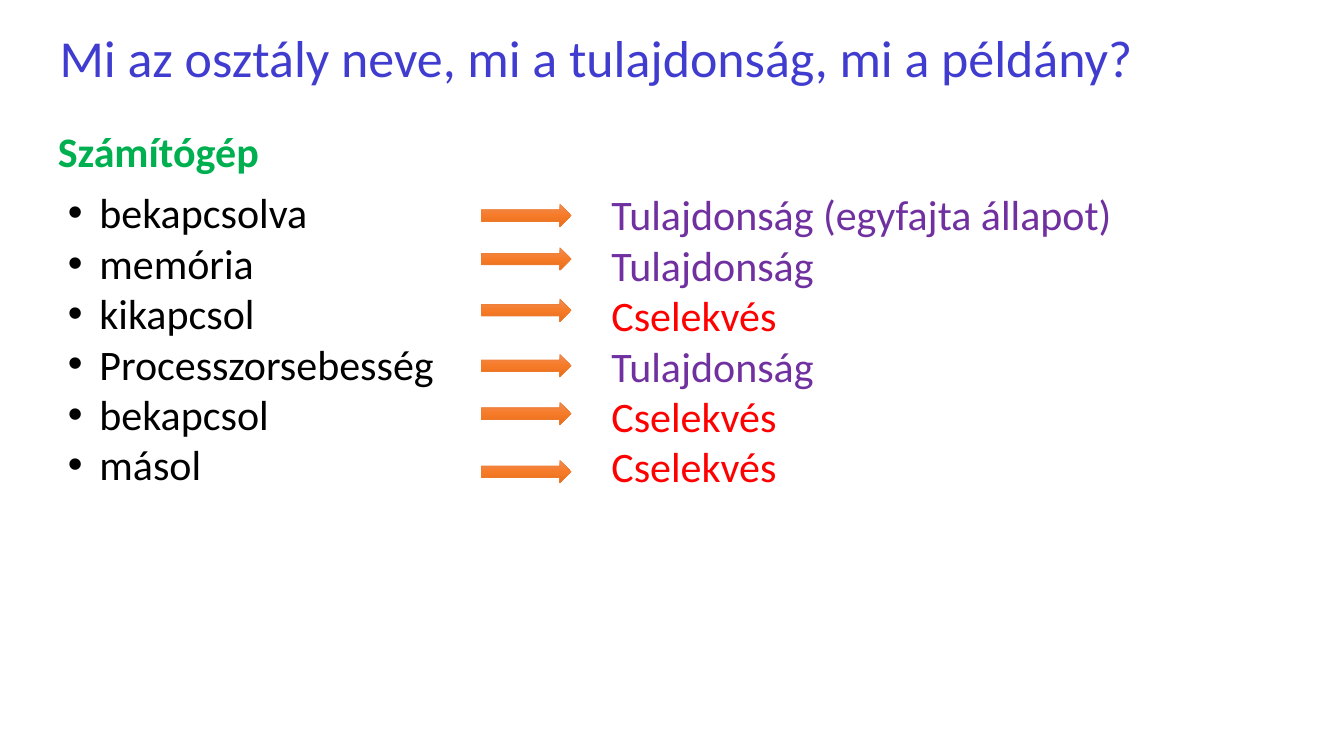
from copy import deepcopy

from pptx import Presentation
from pptx.dml.color import RGBColor
from pptx.enum.shapes import MSO_SHAPE
from pptx.enum.text import MSO_ANCHOR
from pptx.oxml.ns import qn
from pptx.util import Pt
from lxml import etree

ARROW = MSO_SHAPE.RIGHT_ARROW
MIDDLE = MSO_ANCHOR.MIDDLE
FONT = "Calibri"
BLUE, GREEN, BLACK = "403CCF", "00B050", "000000"
PURPLE, RED, ORANGE = "7030A0", "FF0000", "ED7D31"
STOPS = [(0, "F18C57"), (0.5, "F67B28"), (1, "E56C19")]
ROWS = [
    ("bekapcsolva", "Tulajdonság (egyfajta állapot)", PURPLE, 175),
    ("memória", "Tulajdonság", PURPLE, 212.4),
    ("kikapcsol", "Cselekvés", RED, 256.3),
    ("Processzorsebesség", "Tulajdonság", PURPLE, 303.8),
    ("bekapcsol", "Cselekvés", RED, 344.9),
    ("másol", "Cselekvés", RED, 394.6),
]


def color(code):
    return RGBColor.from_string(code)


def add_box(slide, left, top, width, height):
    box = slide.shapes.add_textbox(Pt(left), Pt(top), Pt(width), Pt(height))
    frame = box.text_frame
    frame.word_wrap = True
    return frame


def add_run(para, text, code, size=36, bold=False):
    run = para.add_run()
    run.text = text
    font = run.font
    font.name, font.size, font.bold = FONT, Pt(size), bold
    font.color.rgb = color(code)


def add_bullet(para):
    props = para._p.get_or_add_pPr()
    props.set("marL", str(Pt(27)))
    props.set("indent", str(-Pt(27)))
    etree.SubElement(props, qn("a:buFont")).set("typeface", "Arial")
    etree.SubElement(props, qn("a:buChar")).set("char", "•")


def add_list(frame, items, bullet=False):
    for index, (text, code) in enumerate(items):
        para = frame.add_paragraph() if index else frame.paragraphs[0]
        if bullet:
            add_bullet(para)
        add_run(para, text, code)


def add_arrow(slide, top):
    arrow = slide.shapes.add_shape(ARROW, Pt(412.6), Pt(top), Pt(77), Pt(19.4))
    arrow.shadow.inherit = False
    arrow.line.color.rgb = color(ORANGE)
    arrow.line.width = Pt(0.5)
    fill = arrow.fill
    fill.gradient()
    fill.gradient_angle = 270
    stops = arrow._element.spPr.find(".//" + qn("a:gsLst"))
    stops.append(deepcopy(stops[0]))
    for stop, (place, code) in zip(fill.gradient_stops, STOPS):
        stop.position = place
        stop.color.rgb = color(code)


def add_title(slide):
    frame = add_box(slide, 51.1, 20, 960, 56.2)
    frame.margin_left = frame.margin_right = 0
    frame.margin_top = frame.margin_bottom = 0
    para = frame.paragraphs[0]
    para.line_spacing = Pt(55.5)
    add_run(para, "Mi az osztály neve, mi a tulajdonság, mi a példány?", BLUE, 44.5)


def main():
    deck = Presentation()
    deck.slide_width, deck.slide_height = Pt(1152), Pt(648)
    slide = deck.slides.add_slide(deck.slide_layouts[6])
    add_title(slide)
    head = add_box(slide, 42.5, 103.7, 267.8, 51.1)
    head.vertical_anchor = MIDDLE
    add_run(head.paragraphs[0], "Számítógép", GREEN, bold=True)
    terms = add_box(slide, 51.1, 156.7, 361.4, 269.3)
    add_list(terms, [(term, BLACK) for term, _, _, _ in ROWS], bullet=True)
    kinds = add_box(slide, 517, 158.4, 573.8, 269.3)
    add_list(kinds, [(kind, code) for _, kind, code, _ in ROWS])
    for _, _, _, top in ROWS:
        add_arrow(slide, top)
    deck.save("out.pptx")


if __name__ == "__main__":
    main()
